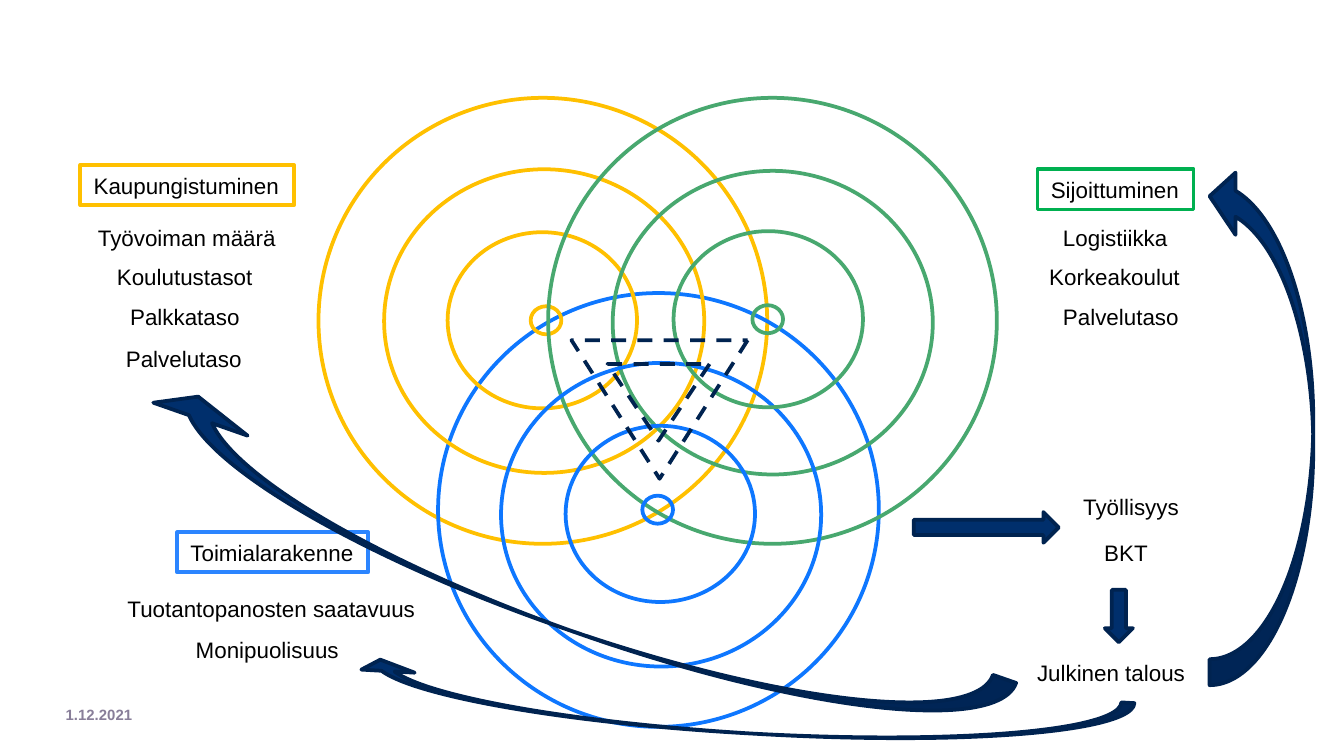
import pptx
import pptx.util
import pptx.dml.color
import pptx.enum.dml
import pptx.enum.shapes
import pptx.enum.text

Cm = pptx.util.Cm
Pt = pptx.util.Pt
kinds = pptx.enum.shapes.MSO_SHAPE
hues = {
    "gold": "FFC000", "blue": "0E77FF", "green": "48A86F",
    "sky": "2B85FF", "leaf": "00B050", "navy": "002350",
    "deep": "002F6C", "white": "FFFFFF", "black": "000000", "grey": "887E99",
}

deck = pptx.Presentation()
deck.slide_width = Cm(25.4)
deck.slide_height = Cm(14.29)
slide = deck.slides.add_slide(deck.slide_layouts[6])


def draw(kind, x, y, w, h, edge, fill=None):
    shape = slide.shapes.add_shape(kind, Cm(x), Cm(y), Cm(w), Cm(h))
    shape.shadow.inherit = False
    shape.line.color.rgb = pptx.dml.color.RGBColor.from_string(hues[edge])
    shape.line.width = Pt(2)
    if fill:
        shape.fill.solid()
        shape.fill.fore_color.rgb = pptx.dml.color.RGBColor.from_string(hues[fill])
    else:
        shape.fill.background()
    return shape


def write(shape, text, size, hue, bold=False):
    frame = shape.text_frame
    frame.text = text
    frame.vertical_anchor = pptx.enum.text.MSO_ANCHOR.MIDDLE
    line = frame.paragraphs[0]
    line.alignment = pptx.enum.text.PP_ALIGN.LEFT
    font = line.runs[0].font
    font.name = "Arial"
    font.size = Pt(size)
    font.bold = bold
    font.color.rgb = pptx.dml.color.RGBColor.from_string(hues[hue])
    return frame


date = slide.shapes.add_textbox(Cm(1.24), Cm(13.26), Cm(2.29), Cm(0.48))
frame = write(date, "1.12.2021", 8, "grey", True)
frame.word_wrap = True
frame.margin_left = frame.margin_right = frame.margin_top = frame.margin_bottom = 0

sizes = {"outer": (8.48, 8.43), "base": (8.33, 8.2), "mid": (6.05, 5.74),
         "inner": (3.58, 3.33), "dot": (0.58, 0.53)}
rings = [
    (6.02, 1.85, "outer", "gold"),
    (8.28, 5.54, "base", "blue"),
    (7.26, 3.2, "mid", "gold"),
    (8.46, 4.39, "inner", "gold"),
    (10.03, 5.79, "dot", "gold"),
    (14.22, 5.77, "dot", "green"),
    (10.36, 1.85, "outer", "green"),
    (11.58, 3.23, "mid", "green"),
    (9.47, 6.86, "mid", "blue"),
    (12.73, 4.37, "inner", "green"),
    (10.69, 8.05, "inner", "blue"),
    (12.14, 9.37, "dot", "blue"),
]
for x, y, size, hue in rings:
    draw(kinds.OVAL, x, y, *sizes[size], hue)

for x, y, w, h in [(10.8, 6.43, 3.33, 2.62), (11.48, 6.88, 1.93, 1.45)]:
    wedge = draw(kinds.ISOSCELES_TRIANGLE, x, y, w, h, "navy")
    wedge.rotation = 180
    wedge.line.dash_style = pptx.enum.dml.MSO_LINE.DASH

labels = [
    ("Kaupungistuminen", 1.52, 3.12, 4.04, "gold"),
    ("Työvoiman määrä", 1.6, 4.11, 3.91, None),
    ("Koulutustasot", 1.96, 4.85, 3.1, None),
    ("Palkkataso", 2.21, 5.61, 2.59, None),
    ("Palvelutaso", 2.13, 6.4, 2.72, None),
    ("Toimialarakenne", 3.35, 10.06, 3.61, "sky"),
    ("Tuotantopanosten saatavuus", 2.16, 11.13, 5.99, None),
    ("Monipuolisuus", 3.45, 11.89, 3.35, None),
    ("Sijoittuminen", 19.61, 3.2, 2.95, "leaf"),
    ("Logistiikka", 19.84, 4.11, 2.49, None),
    ("Korkeakoulut", 19.58, 4.85, 3, None),
    ("Palvelutaso", 19.84, 5.61, 2.72, None),
    ("Työllisyys", 20.22, 9.19, 2.34, None),
    ("BKT", 20.62, 10.06, 1.35, None),
    ("Julkinen talous", 19.35, 12.34, 3.33, None),
]
for text, x, y, w, edge in labels:
    if edge:
        box = draw(kinds.RECTANGLE, x, y, w, 0.76, edge, "white")
    else:
        box = slide.shapes.add_textbox(Cm(x), Cm(y), Cm(w), Cm(0.76))
    frame = write(box, text, 12, "black")
    frame.word_wrap = False
    frame.auto_size = pptx.enum.text.MSO_AUTO_SIZE.SHAPE_TO_FIT_TEXT

for x, y, w, h, turn in [(17.27, 9.68, 2.74, 0.58, 0), (20.65, 11.38, 0.99, 0.53, 90)]:
    arrow = draw(kinds.RIGHT_ARROW, x, y, w, h, "navy", "deep")
    arrow.rotation = turn

curves = [
    (22.86, 3.12, 1.96, 9.83, 180, False, (0.25, 0.6, 0.25)),
    (9.8, 2.26, 1.85, 17.32, 109.3, True, (0.25, 1.02, 0.21)),
    (13.54, 5.97, 0.99, 14.78, 93.3, True, (0.25, 1.02, 0.21)),
]
for x, y, w, h, turn, flip, bends in curves:
    arrow = draw(kinds.CURVED_RIGHT_ARROW, x, y, w, h, "navy", "deep")
    arrow.rotation = turn
    if flip:
        arrow.element.spPr.xfrm.set("flipH", "1")
    for i, bend in enumerate(bends):
        arrow.adjustments[i] = bend

deck.save("out.pptx")
